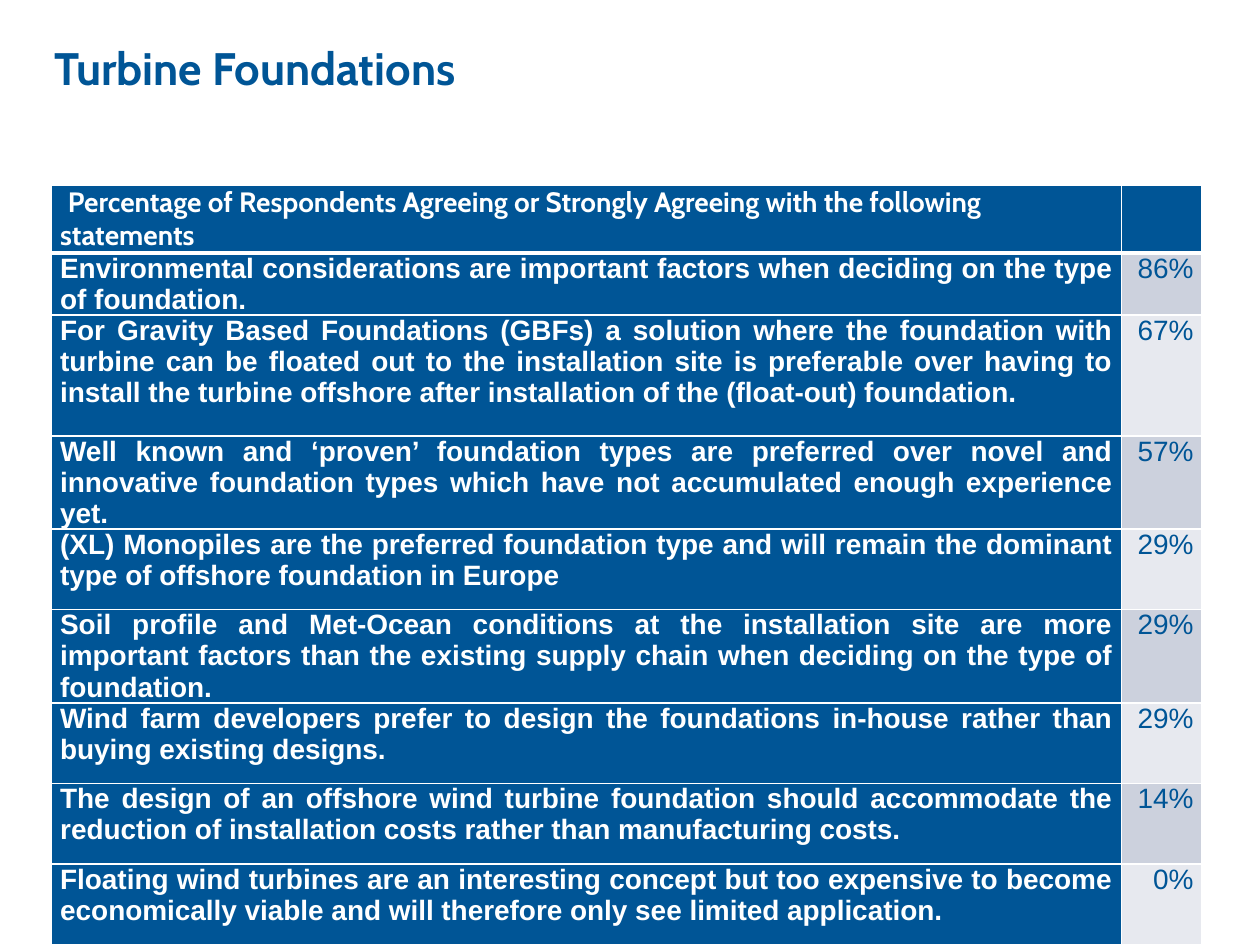
from lxml import etree
from pptx import Presentation
from pptx.dml.color import RGBColor
from pptx.enum.text import MSO_ANCHOR, PP_ALIGN
from pptx.oxml.ns import qn
from pptx.util import Pt

BLUE = RGBColor(0x00, 0x55, 0x96)
WHITE = RGBColor(0xFF, 0xFF, 0xFF)
BAND_DARK = RGBColor(0xCC, 0xD1, 0xDD)
BAND_LIGHT = RGBColor(0xE7, 0xE9, 0xEF)
LEFT, RIGHT, JUSTIFY = PP_ALIGN.LEFT, PP_ALIGN.RIGHT, PP_ALIGN.JUSTIFY
TOP = MSO_ANCHOR.TOP

TITLE_FORMAT = {"name": "Cabin", "size": Pt(26), "bold": True}
HEADER_FORMAT = {"name": "Cabin", "size": Pt(16), "bold": True}
STATEMENT_FORMAT = {"name": "Arial", "size": Pt(16), "bold": True}
PERCENT_FORMAT = {"name": "Arial", "size": Pt(16), "bold": False}
TITLE_FRAME = {"word_wrap": True, "vertical_anchor": TOP, "margin_top": Pt(5)}
CELL_MARGINS = {"margin_left": Pt(4.9), "margin_right": Pt(4.9),
                "margin_top": Pt(0), "margin_bottom": Pt(0)}

HEADER = "Percentage of Respondents Agreeing or Strongly Agreeing with the following statements"
# Statement, share agreeing, row height in points
STATEMENTS = [
    ("Environmental considerations are important factors when deciding on the type "
     "of foundation.", "86%", 23),
    ("For Gravity Based Foundations (GBFs) a solution where the foundation with turbine "
     "can be floated out to the installation site is preferable over having to install "
     "the turbine offshore after installation of the (float-out) foundation.", "67%", 69),
    ("Well known and ‘proven’ foundation types are preferred over novel and innovative "
     "foundation types which have not accumulated enough experience yet.", "57%", 46),
    ("(XL) Monopiles are the preferred foundation type and will remain the dominant type "
     "of offshore foundation in Europe", "29%", 46),
    ("Soil profile and Met-Ocean conditions at the installation site are more important "
     "factors than the existing supply chain when deciding on the type of foundation.",
     "29%", 46),
    ("Wind farm developers prefer to design the foundations in-house rather than buying "
     "existing designs.", "29%", 46),
    ("The design of an offshore wind turbine foundation should accommodate the reduction "
     "of installation costs rather than manufacturing costs.", "14%", 46),
    ("Floating wind turbines are an interesting concept but too expensive to become "
     "economically viable and will therefore only see limited application.", "0%", 46),
]
HEADER_HEIGHT = 23
PERCENT_WIDTH = 46


def set_attributes(target, values):
    for name, value in values.items():
        setattr(target, name, value)


def add_run(paragraph, text, color, font_format):
    run = paragraph.add_run()
    run.text = text
    set_attributes(run.font, font_format)
    run.font.color.rgb = color


def set_borders(cell, top=1, bottom=1):
    """Give the cell white borders, with widths in points."""
    properties = cell._tc.get_or_add_tcPr()
    for side, width in {"L": 1, "R": 1, "T": top, "B": bottom}.items():
        line = etree.SubElement(properties, qn(f"a:ln{side}"), w=str(Pt(width)))
        fill = etree.SubElement(line, qn("a:solidFill"))
        etree.SubElement(fill, qn("a:srgbClr"), val=str(WHITE))


def style_cell(cell, color, **borders):
    set_borders(cell, **borders)
    cell.fill.solid()
    cell.fill.fore_color.rgb = color
    set_attributes(cell, CELL_MARGINS)


def fill_cell(cell, text, color, font_format, alignment):
    paragraph = cell.text_frame.paragraphs[0]
    paragraph.alignment = alignment
    add_run(paragraph, text, color, font_format)


def place_title(slide, left, top, width, height):
    title = slide.shapes.title
    set_attributes(title, {"left": left, "top": top, "width": width, "height": height})
    set_attributes(title.text_frame, TITLE_FRAME)
    paragraph = title.text_frame.paragraphs[0]
    paragraph.alignment = LEFT
    add_run(paragraph, "Turbine Foundations", BLUE, TITLE_FORMAT)


def place_table(slide, left, top, width, height):
    table = slide.shapes.add_table(len(STATEMENTS) + 1, 2, left, top, width, height).table
    table.columns[0].width = width - Pt(PERCENT_WIDTH)
    table.columns[1].width = Pt(PERCENT_WIDTH)

    # Header row, with a heavier line below
    table.rows[0].height = Pt(HEADER_HEIGHT)
    for cell in table.rows[0].cells:
        style_cell(cell, BLUE, bottom=3)
    header = table.cell(0, 0)
    fill_cell(header, " ", WHITE, STATEMENT_FORMAT, LEFT)
    add_run(header.text_frame.paragraphs[0], HEADER, WHITE, HEADER_FORMAT)

    # Statement rows, with banded percentages
    for index, (statement, percent, row_height) in enumerate(STATEMENTS, start=1):
        table.rows[index].height = Pt(row_height)
        statement_cell, percent_cell = table.rows[index].cells
        top_border = 3 if index == 1 else 1
        style_cell(statement_cell, BLUE, top=top_border)
        style_cell(percent_cell, BAND_DARK if index % 2 else BAND_LIGHT, top=top_border)
        fill_cell(statement_cell, statement, WHITE, STATEMENT_FORMAT, JUSTIFY)
        fill_cell(percent_cell, percent, BLUE, PERCENT_FORMAT, RIGHT)


def main():
    presentation = Presentation()
    presentation.slide_width, presentation.slide_height = Pt(720), Pt(540)
    slide = presentation.slides.add_slide(presentation.slide_layouts[5])
    place_title(slide, Pt(24), Pt(18), Pt(630), Pt(47))
    table_height = HEADER_HEIGHT + sum(height for _, _, height in STATEMENTS)
    place_table(slide, Pt(29.5), Pt(105.8), Pt(657.4), Pt(table_height))
    presentation.save("out.pptx")


if __name__ == "__main__":
    main()
